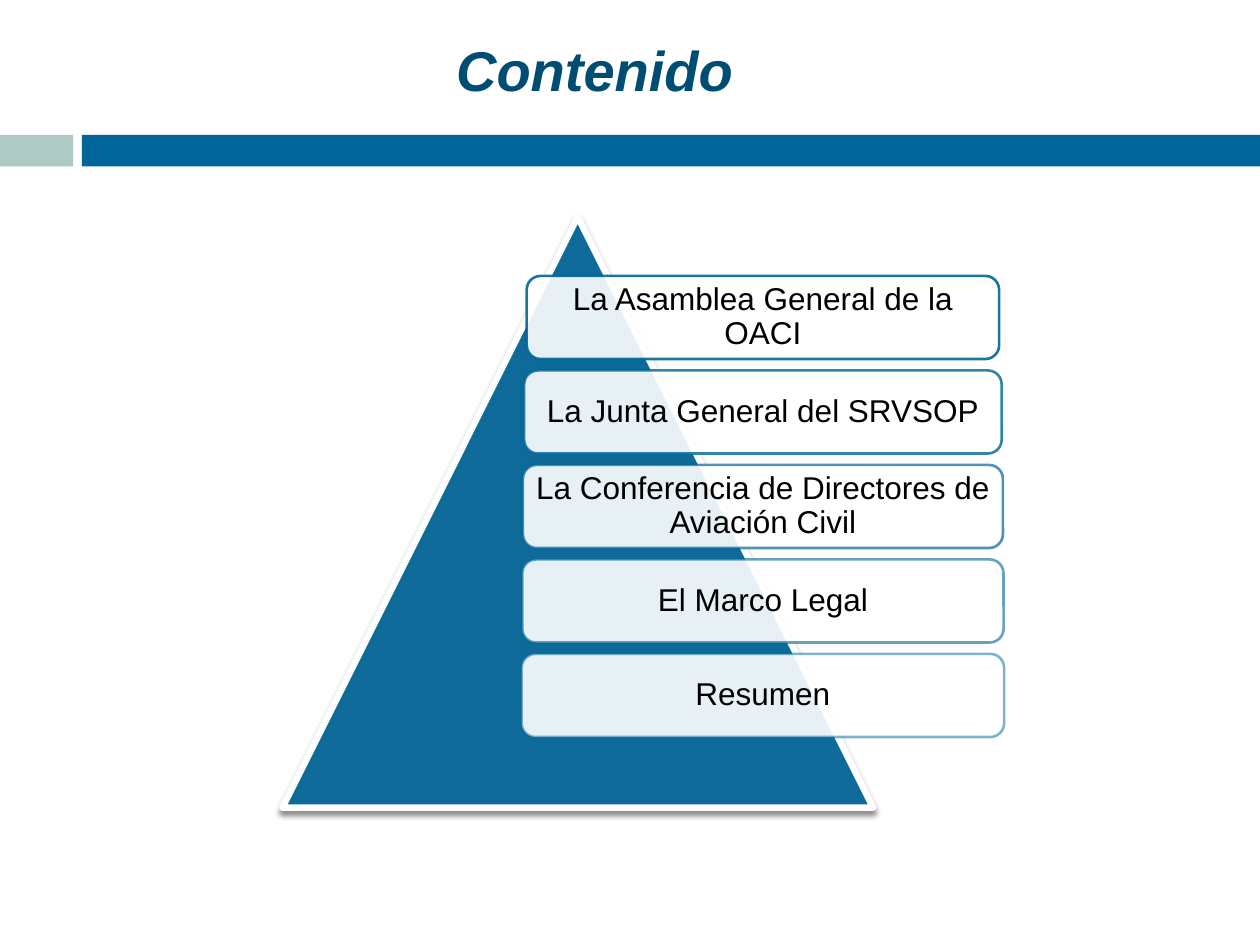
from lxml import etree
from pptx import Presentation
from pptx import util as u
from pptx.dml.color import RGBColor
from pptx.enum import shapes, text
from pptx.oxml.ns import qn

COLS, ROWS = 100, 75


def rgb(value):
    return RGBColor.from_string(value)


def add_alpha(color_el, percent):
    etree.SubElement(color_el, qn("a:alpha"), val=str(percent * 1000))


class Deck:
    font = "Arial"
    blue, navy, sage = "006699", "004D73", "AFCAC4"
    white, black = "FFFFFF", "000000"

    def __init__(self):
        self.prs = Presentation()
        self.prs.slide_width, self.prs.slide_height = u.Inches(10), u.Inches(7.5)
        self.s = self.prs.slides.add_slide(self.prs.slide_layouts[5])

    def grid(self, x, y, w, h):
        col, row = self.prs.slide_width / COLS, self.prs.slide_height / ROWS
        return round(x * col), round(y * row), round(w * col), round(h * row)

    def set_text(self, sp, words, size, color, inset, bold=False, italic=False):
        tf = sp.text_frame
        tf.text = words
        tf.word_wrap = True
        tf.auto_size = text.MSO_AUTO_SIZE.NONE
        tf.vertical_anchor = text.MSO_ANCHOR.MIDDLE
        tf.margin_left = tf.margin_right = u.Inches(inset)
        tf.margin_top = tf.margin_bottom = u.Inches(inset)
        p = tf.paragraphs[0]
        p.alignment = text.PP_ALIGN.CENTER
        p.line_spacing = 0.9
        f = p.runs[0].font
        f.name, f.size, f.bold, f.italic = self.font, u.Pt(size), bold, italic
        f.color.rgb = rgb(color)

    def title(self, words, *cells):
        sp = self.s.shapes.title
        sp.left, sp.top, sp.width, sp.height = self.grid(*cells)
        self.set_text(sp, words, 32, self.navy, 0.05, bold=True, italic=True)

    def shape(self, kind, cells, fill, alpha=100, line=None, width=0, line_alpha=100):
        sp = self.s.shapes.add_shape(kind, *self.grid(*cells))
        sp.shadow.inherit = False
        sp.fill.solid()
        sp.fill.fore_color.rgb = rgb(fill)
        spPr = sp._element.spPr
        if alpha < 100:
            add_alpha(spPr.find(qn("a:solidFill"))[0], alpha)
        if line is None:
            sp.line.fill.background()
            return sp
        sp.line.color.rgb = rgb(line)
        sp.line.width = u.Pt(width)
        if line_alpha < 100:
            add_alpha(spPr.find(qn("a:ln")).find(qn("a:solidFill"))[0], line_alpha)
        return sp

    def bar(self, fill, *cells):
        self.shape(shapes.MSO_SHAPE.RECTANGLE, cells, fill)

    def pyramid(self, *cells):
        sp = self.shape(shapes.MSO_SHAPE.ISOSCELES_TRIANGLE, cells, self.blue, 90,
                        self.white, 3.75)
        effects = sp._element.spPr.find(qn("a:effectLst"))
        shadow = etree.SubElement(effects, qn("a:outerShdw"), blurRad=str(int(u.Pt(3))),
                                  dist=str(int(u.Pt(2.4))), dir="5400000", rotWithShape="0")
        add_alpha(etree.SubElement(shadow, qn("a:srgbClr"), val=self.black), 45)

    def label(self, words, line_alpha, *cells):
        sp = self.shape(shapes.MSO_SHAPE.ROUNDED_RECTANGLE, cells, self.white, 90,
                        self.blue, 1.5, line_alpha)
        self.set_text(sp, words, 18, self.black, 0.04)


def main():
    d = Deck()
    d.bar(d.sage, 0, 10.7, 5.8, 2.5)
    d.bar(d.blue, 6.5, 10.7, 93.5, 2.5)
    d.title("Contenido", 2.6, 2.5, 89.2, 6.7)
    d.pyramid(22.4, 17.2, 46.9, 46.9)

    center, top, step, height = 60.55, 21.9, 7.5, 6.6
    topics = [
        ("La Asamblea General de la OACI", 37.5),
        ("La Junta General del SRVSOP", 37.9),
        ("La Conferencia de Directores de Aviación Civil", 38.1),
        ("El Marco Legal", 38.2),
        ("Resumen", 38.3),
    ]
    for i, (words, width) in enumerate(topics):
        d.label(words, 90 - 10 * i, center - width / 2, top + step * i, width, height)

    d.prs.save("out.pptx")


if __name__ == "__main__":
    main()
